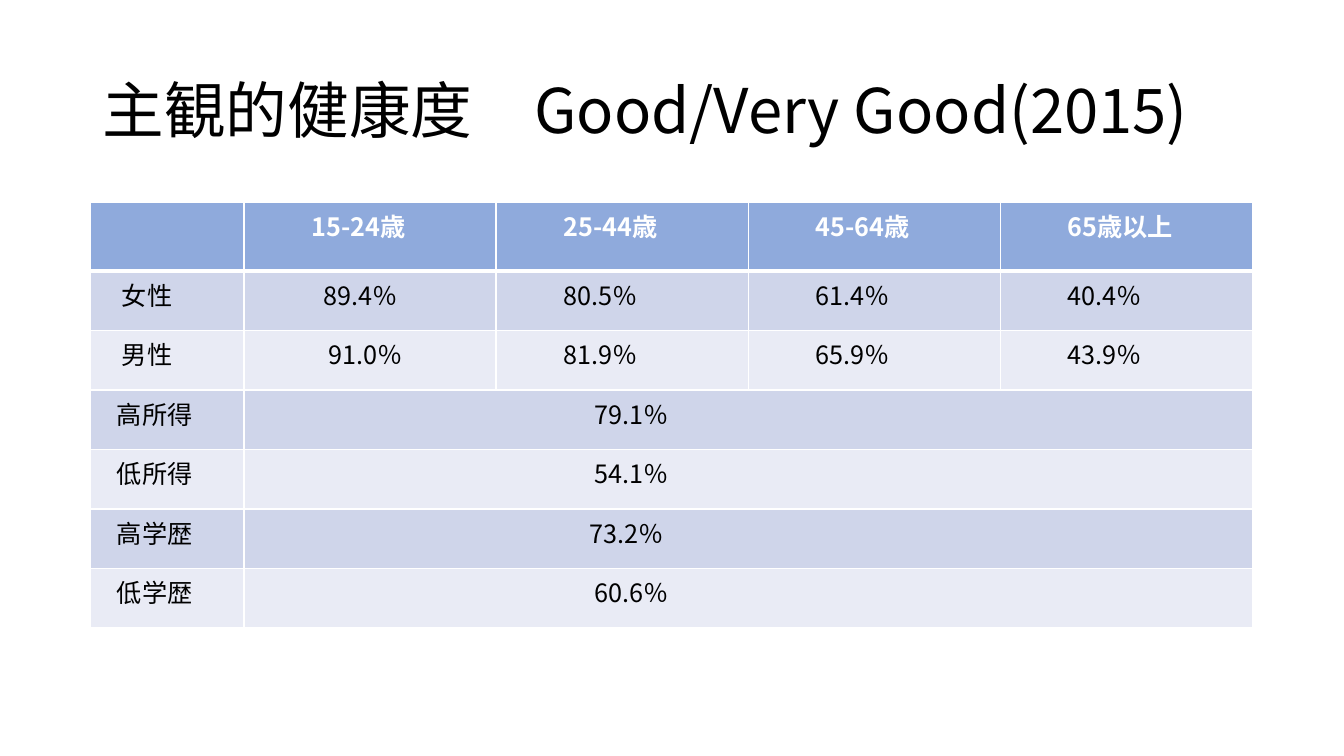
from dataclasses import dataclass

from pptx import Presentation
from pptx.dml.color import RGBColor
from pptx.enum import text
from pptx.oxml import ns, xmlchemy
from pptx.util import Inches, Pt


@dataclass(frozen=True)
class Theme:
    font: str = "Noto Sans CJK JP"
    title_size: int = 44
    table_size: int = 18
    ink: str = "000000"
    white: str = "FFFFFF"
    header: str = "8FAADC"
    bands: tuple = ("CFD5EA", "E9EBF5")
    rule: int = 1
    header_rule: int = 3


THEME = Theme()

# Each entry pairs the wording with its left indent in inches
HEADER = [("", 0.1), ("15-24歳", 0.67), ("25-44歳", 0.67),
          ("45-64歳", 0.67), ("65歳以上", 0.67)]
ROWS = [
    [("女性", 0.31), ("89.4％", 0.79), ("80.5％", 0.67), ("61.4％", 0.67), ("40.4％", 0.67)],
    [("男性", 0.31), ("91.0％", 0.84), ("81.9％", 0.67), ("65.9％", 0.67), ("43.9％", 0.67)],
    [("高所得", 0.26), ("79.1％", 3.48)],
    [("低所得", 0.26), ("54.1％", 3.48)],
    [("高学歴", 0.26), ("73.2％", 3.43)],
    [("低学歴", 0.26), ("60.6％", 3.48)],
]
COL_WIDTHS = [1.52] + [2.5] * 4
ROW_HEIGHTS = [0.68] + [0.59] * len(ROWS)


def write(tf, words, *, size, color=THEME.ink, bold=False, spacing=None):
    """Fill a text frame with one formatted paragraph."""
    p = tf.paragraphs[0]
    p.line_spacing = spacing
    r = p.add_run()
    r.text = words
    f = r.font
    f.size, f.bold, f.name = Pt(size), bold, THEME.font
    f.color.rgb = RGBColor.from_string(color)
    ea = xmlchemy.OxmlElement("a:ea")
    ea.set("typeface", THEME.font)
    r._r.rPr.find(ns.qn("a:latin")).addnext(ea)


def add_title(s, words):
    sp = s.shapes.add_textbox(Inches(0.92), Inches(0.4), Inches(11.5), Inches(1.45))
    tf = sp.text_frame
    tf.word_wrap = True
    tf.vertical_anchor = text.MSO_ANCHOR.MIDDLE
    write(tf, words, size=THEME.title_size, spacing=0.9)


def add_border(cell, side, width):
    ln = xmlchemy.OxmlElement(f"a:ln{side}")
    ln.set("w", str(Pt(width)))
    fill = xmlchemy.OxmlElement("a:solidFill")
    clr = xmlchemy.OxmlElement("a:srgbClr")
    clr.set("val", THEME.white)
    fill.append(clr)
    ln.append(fill)
    cell._tc.get_or_add_tcPr().append(ln)


def style_cell(cell, fill, top, bottom):
    for side, width in zip("LRTB", (THEME.rule, THEME.rule, top, bottom)):
        add_border(cell, side, width)
    cell.fill.solid()
    cell.fill.fore_color.rgb = RGBColor.from_string(fill)


def add_health_table(s):
    n_rows, n_cols = len(ROW_HEIGHTS), len(COL_WIDTHS)
    frame = s.shapes.add_table(n_rows, n_cols, Inches(0.9), Inches(2.01),
                               Inches(sum(COL_WIDTHS)), Inches(sum(ROW_HEIGHTS)))
    table = frame.table
    for col, width in zip(table.columns, COL_WIDTHS):
        col.width = Inches(width)
    for row, height in zip(table.rows, ROW_HEIGHTS):
        row.height = Inches(height)

    for i, entries in enumerate([HEADER] + ROWS):
        is_header = i == 0
        fill = THEME.header if is_header else THEME.bands[(i - 1) % 2]
        top = THEME.header_rule if i == 1 else THEME.rule
        bottom = THEME.header_rule if is_header else THEME.rule
        for j in range(n_cols):
            style_cell(table.cell(i, j), fill, top, bottom)
        # A single value covers all age groups
        if len(entries) == 2:
            table.cell(i, 1).merge(table.cell(i, n_cols - 1))
        for j, (words, indent) in enumerate(entries):
            cell = table.cell(i, j)
            cell.margin_left = Inches(indent)
            if words:
                write(cell.text_frame, words, size=THEME.table_size, bold=is_header,
                      color=THEME.white if is_header else THEME.ink)


def main():
    prs = Presentation()
    prs.slide_width, prs.slide_height = Inches(13.33), Inches(7.5)
    s = prs.slides.add_slide(prs.slide_layouts[6])
    # Heading
    add_title(s, "主観的健康度　Good/Very Good(2015)")
    # Self-rated health by group
    add_health_table(s)
    prs.save("out.pptx")


if __name__ == "__main__":
    main()
